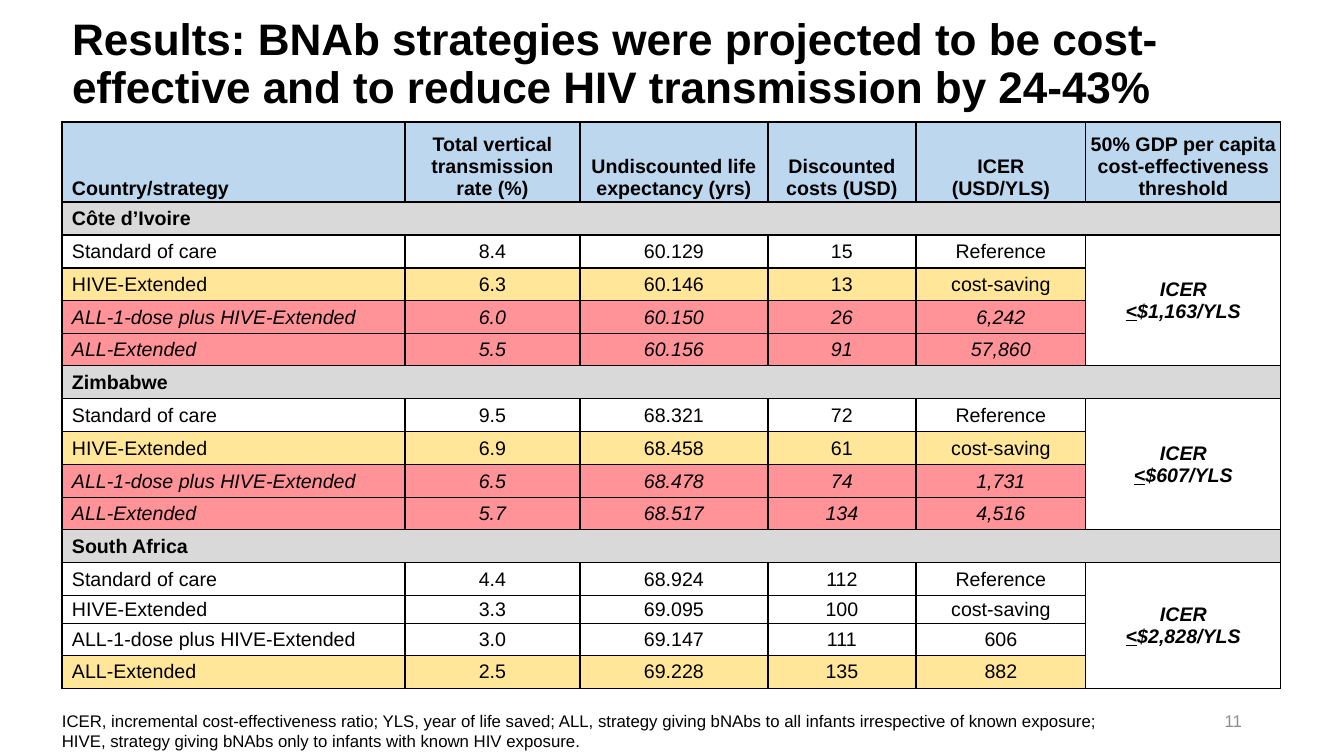
from lxml.etree import SubElement
from pptx import Presentation
from pptx.dml.color import RGBColor
from pptx.enum.text import MSO_ANCHOR as Anchor, MSO_AUTO_SIZE as AutoSize, PP_ALIGN as Align
from pptx.oxml.ns import qn
from pptx.util import Emu, Pt

TITLE = "Results: BNAb strategies were projected to be cost-effective and to reduce HIV transmission by 24-43%"
PAGE = "11"
NOTES = (
    "ICER, incremental cost-effectiveness ratio; YLS, year of life saved; ALL, strategy giving bNAbs to all infants irrespective of known exposure;\n"
    "HIVE, strategy giving bNAbs only to infants with known HIV exposure."
)
HEADERS = [
    "Country/strategy",
    "Total vertical transmission\nrate (%)",
    "Undiscounted life expectancy (yrs)",
    "Discounted costs (USD)",
    "ICER\v(USD/YLS)",
    "50% GDP per capita cost-effectiveness threshold",
]
STRATEGIES = ["Standard of care", "HIVE-Extended", "ALL-1-dose plus HIVE-Extended", "ALL-Extended"]
WHITE, YELLOW, RED, BLUE, GREY = "FFFFFF", "FFE699", "FF9397", "BDD7EE", "D9D9D9"
COUNTRIES = [
    ("Côte d’Ivoire", "$1,163/YLS", [WHITE, YELLOW, RED, RED], [
        ("8.4", "60.129", "15", "Reference"),
        ("6.3", "60.146", "13", "cost-saving"),
        ("6.0", "60.150", "26", "6,242"),
        ("5.5", "60.156", "91", "57,860"),
    ]),
    ("Zimbabwe", "$607/YLS", [WHITE, YELLOW, RED, RED], [
        ("9.5", "68.321", "72", "Reference"),
        ("6.9", "68.458", "61", "cost-saving"),
        ("6.5", "68.478", "74", "1,731"),
        ("5.7", "68.517", "134", "4,516"),
    ]),
    ("South Africa", "$2,828/YLS", [WHITE, WHITE, WHITE, YELLOW], [
        ("4.4", "68.924", "112", "Reference"),
        ("3.3", "69.095", "100", "cost-saving"),
        ("3.0", "69.147", "111", "606"),
        ("2.5", "69.228", "135", "882"),
    ]),
]
COLUMNS = [343, 175, 188, 148, 170, 195]
ROWS = [80] + [33, 33, 33, 33, 32] * 2 + [33, 33, 26, 32, 33]


def px(n):
    return Emu(round(n * 914400 / 100.8))


def rgb(value):
    return RGBColor.from_string(value)


def style(tf, size, color="000000", bold=False, italic=False, align=Align.LEFT):
    for p in tf.paragraphs:
        p.alignment = align
        for r in p.runs:
            r.font.name = "Arial"
            r.font.size = Pt(size)
            r.font.bold = bold
            r.font.italic = italic
            r.font.color.rgb = rgb(color)


def add_text(s, text, x, y, w, h, **look):
    tf = s.shapes.add_textbox(px(x), px(y), px(w), px(h)).text_frame
    tf.text = text
    style(tf, 12, **look)
    return tf


def fill_cell(table, row, col, text, fill, bold=False, italic=False, anchor=Anchor.MIDDLE):
    cell = table.cell(row, col)
    cell.text_frame.text = text
    cell.vertical_anchor = anchor
    cell.margin_left = px(2 if col else 10)
    cell.margin_right = cell.margin_top = cell.margin_bottom = px(2)
    cell.fill.solid()
    cell.fill.fore_color.rgb = rgb(fill)
    style(cell.text_frame, 14, bold=bold, italic=italic, align=Align.CENTER if col else Align.LEFT)
    return cell


def add_borders(cell):
    tcPr = cell._tc.get_or_add_tcPr()
    for side in ("a:lnL", "a:lnR", "a:lnT", "a:lnB"):
        line = SubElement(tcPr, qn(side), w=str(Pt(1)))
        SubElement(SubElement(line, qn("a:solidFill")), qn("a:srgbClr"), val="000000")


def add_results(s):
    frame = s.shapes.add_table(len(ROWS), len(COLUMNS), px(62), px(122), px(sum(COLUMNS)), px(sum(ROWS)))
    table = frame.table
    table.first_row = table.horz_banding = False
    for column, width in zip(table.columns, COLUMNS):
        column.width = px(width)
    for row, height in zip(table.rows, ROWS):
        row.height = px(height)
    for cell in table.iter_cells():
        add_borders(cell)

    for col, header in enumerate(HEADERS):
        fill_cell(table, 0, col, header, BLUE, bold=True, anchor=Anchor.BOTTOM)
    last = len(COLUMNS) - 1
    block = len(STRATEGIES) + 1
    for i, (country, limit, fills, results) in enumerate(COUNTRIES):
        top = 1 + i * block
        table.cell(top, 0).merge(table.cell(top, last))
        fill_cell(table, top, 0, country, GREY, bold=True)
        table.cell(top + 1, last).merge(table.cell(top + block - 1, last))
        threshold = fill_cell(table, top + 1, last, "ICER\n<", WHITE)
        p = threshold.text_frame.paragraphs[1]
        p.add_run().text = limit
        style(threshold.text_frame, 14, bold=True, italic=True, align=Align.CENTER)
        p.runs[0].font.underline = True
        for row, (strategy, fill, values) in enumerate(zip(STRATEGIES, fills, results), top + 1):
            for col, text in enumerate((strategy, *values)):
                fill_cell(table, row, col, text, fill, italic=fill == RED)


def main():
    prs = Presentation()
    prs.slide_width, prs.slide_height = px(1344), px(756)
    s = prs.slides.add_slide(prs.slide_layouts[5])

    title = s.shapes.title
    title.left, title.top, title.width, title.height = px(62), px(17), px(1190), px(97)
    tf = title.text_frame
    tf.text = TITLE
    tf.word_wrap = True
    tf.auto_size = AutoSize.NONE
    tf.vertical_anchor = Anchor.MIDDLE
    tf.paragraphs[0].line_spacing = 0.9
    style(tf, 31.5, bold=True)

    number = add_text(s, PAGE, 950, 701, 302, 40, color="8C8C8C", align=Align.RIGHT)
    number.word_wrap = True
    number.vertical_anchor = Anchor.MIDDLE
    add_results(s)
    notes = add_text(s, NOTES, 52, 706, 1070, 50)
    notes.word_wrap = False
    prs.save("out.pptx")


if __name__ == "__main__":
    main()
